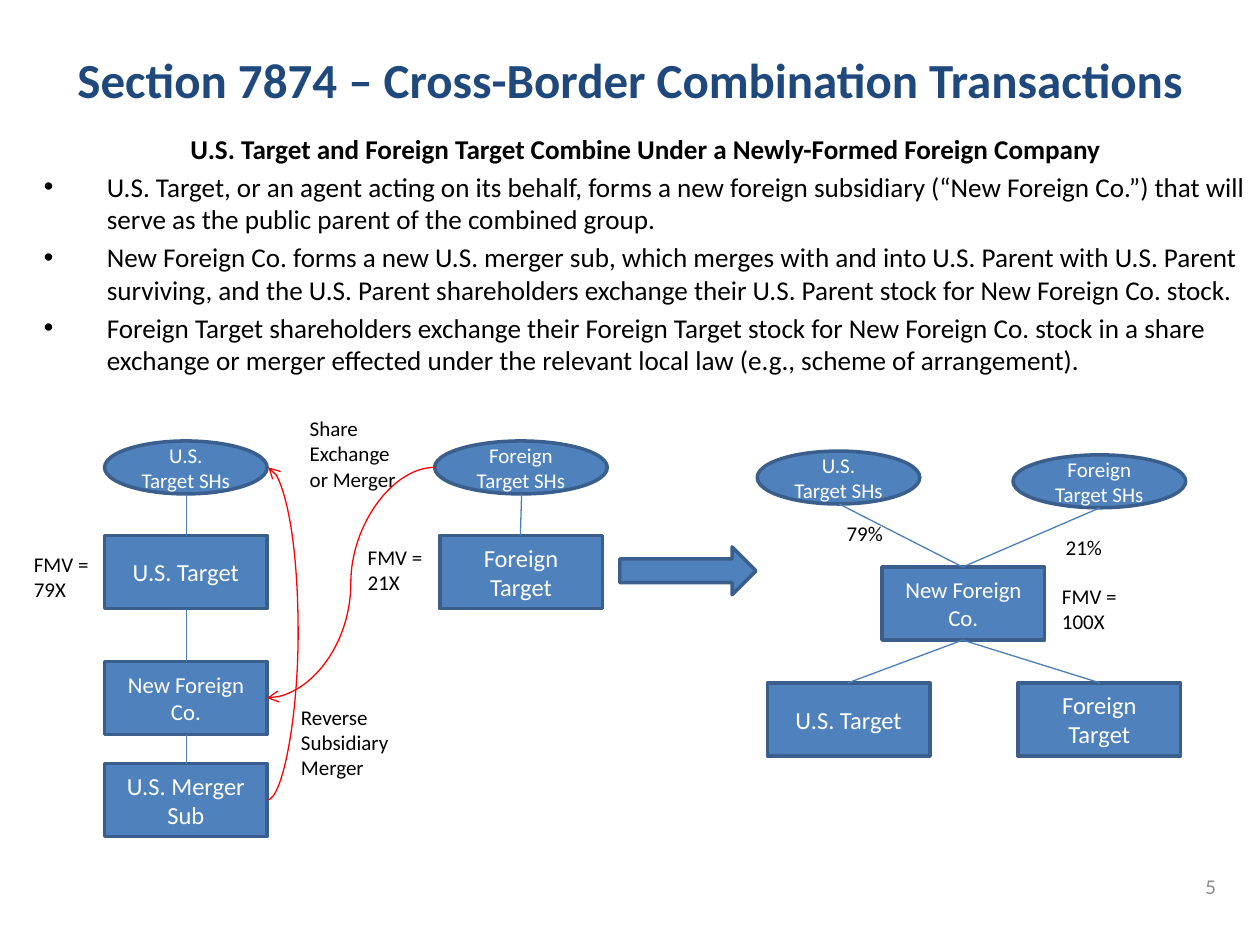
from typing import NamedTuple

from lxml.etree import SubElement
from pptx import Presentation
from pptx.dml.color import RGBColor
from pptx.enum.shapes import MSO_CONNECTOR as Conn, MSO_SHAPE as Shp
from pptx.enum.text import MSO_ANCHOR as Anchor, MSO_AUTO_SIZE as Fit, PP_ALIGN as Align
from pptx.oxml.ns import qn
from pptx.util import Emu, Pt

PX = 9144  # 100 px to the inch
FONT = "Calibri"
BLUE, EDGE, LINK, RED = "4F81BD", "3A5F8C", "4B7EBC", "FF0000"
NAVY, BLACK, WHITE, GREY = "1F497D", "000000", "FFFFFF", "8C8C8C"
BOX_W, BOX_H, OVAL_H = 129, 58, 42


class Node(NamedTuple):
    text: str
    x: int
    y: int
    size: int = 14
    w: int = BOX_W
    h: int = BOX_H
    kind: int = Shp.RECTANGLE


class Label(NamedTuple):
    lines: list[str]
    x: int
    y: int
    w: int
    h: int
    wrap: bool = False


class Link(NamedTuple):
    x1: int
    y1: int
    x2: int
    y2: int


class Curve(NamedTuple):
    link: Link
    bend: int  # thousandths of a percent of the width


def px(n: int) -> Emu:
    return Emu(n * PX)


def rgb(color: str) -> RGBColor:
    return RGBColor.from_string(color)


def add_run(p, text: str, size: float, color: str, bold: bool = False) -> None:
    r = p.add_run()
    r.text = text
    r.font.name, r.font.size, r.font.bold = FONT, Pt(size), bold
    r.font.color.rgb = rgb(color)


def add_text(s, lines: list[str], x: int, y: int, w: int, h: int, size: float,
             color: str = BLACK, bold: bool = False, align=Align.LEFT,
             anchor=Anchor.TOP, wrap: bool = True):
    tf = s.shapes.add_textbox(px(x), px(y), px(w), px(h)).text_frame
    tf.word_wrap, tf.vertical_anchor = wrap, anchor
    for i, line in enumerate(lines):
        p = tf.add_paragraph() if i else tf.paragraphs[0]
        p.alignment = align
        add_run(p, line, size, color, bold)
    return tf


def add_bullet(tf, text: str, size: float) -> None:
    p = tf.add_paragraph()
    add_run(p, text, size, BLACK)
    pPr = p._p.get_or_add_pPr()
    pPr.set("marL", str(px(50)))
    pPr.set("indent", str(px(-50)))
    SubElement(pPr, qn("a:buFont")).set("typeface", "Arial")
    SubElement(pPr, qn("a:buChar")).set("char", "•")


def add_node(s, n: Node) -> None:
    sp = s.shapes.add_shape(n.kind, px(n.x), px(n.y), px(n.w), px(n.h))
    sp.shadow.inherit = False
    sp.fill.solid()
    sp.fill.fore_color.rgb = rgb(BLUE)
    sp.line.color.rgb, sp.line.width = rgb(EDGE), Pt(2)
    if n.text:
        tf = sp.text_frame
        tf.word_wrap, tf.vertical_anchor = True, Anchor.MIDDLE
        tf.paragraphs[0].alignment = Align.CENTER
        add_run(tf.paragraphs[0], n.text, n.size, WHITE)


def add_link(s, link: Link, color: str = LINK, kind=Conn.STRAIGHT):
    c = s.shapes.add_connector(kind, *map(px, link))
    c.line.color.rgb, c.line.width = rgb(color), Pt(0.75)
    SubElement(c._element.spPr, qn("a:effectLst"))
    return c


def add_curve(s, curve: Curve) -> None:
    c = add_link(s, curve.link, RED, Conn.CURVE)
    geom = c._element.spPr.find(qn("a:prstGeom"))
    guide = SubElement(geom.get_or_add_avLst(), qn("a:gd"))
    guide.set("name", "adj1")
    guide.set("fmla", f"val {curve.bend}")
    SubElement(c.line._get_or_add_ln(), qn("a:tailEnd")).set("type", "arrow")


def us_holders(x: int, y: int) -> Node:
    return Node("U.S. Target SHs", x, y, 12, BOX_W, OVAL_H, Shp.OVAL)


def foreign_holders(x: int, y: int) -> Node:
    return Node("Foreign Target SHs", x, y, 12, 137, OVAL_H, Shp.OVAL)


BULLETS = [
    "U.S. Target, or an agent acting on its behalf, forms a new foreign subsidiary "
    "(“New Foreign Co.”) that will serve as the public parent of the combined group.",
    "New Foreign Co. forms a new U.S. merger sub, which merges with and into U.S. Parent "
    "with U.S. Parent surviving, and the U.S. Parent shareholders exchange their "
    "U.S. Parent stock for New Foreign Co. stock.",
    "Foreign Target shareholders exchange their Foreign Target stock for New Foreign Co. "
    "stock in a share exchange or merger effected under the relevant local law "
    "(e.g., scheme of arrangement).",
]
NODES = [
    # Before the combination
    us_holders(83, 350),
    Node("U.S. Target", 83, 425),
    Node("New Foreign Co.", 83, 525, 13),
    Node("U.S. Merger Sub", 83, 606),
    foreign_holders(345, 350),
    Node("Foreign Target", 349, 425),
    Node("", 492, 434, w=108, h=38, kind=Shp.RIGHT_ARROW),
    # After the combination
    us_holders(601, 358),
    foreign_holders(804, 361),
    Node("New Foreign Co.", 700, 450, 13),
    Node("U.S. Target", 609, 542),
    Node("Foreign Target", 808, 542),
]
LINKS = [
    Link(148, 392, 148, 425), Link(148, 483, 148, 525), Link(148, 583, 148, 606),
    Link(414, 392, 413, 425),
    Link(666, 400, 764, 450), Link(873, 403, 764, 450),
    Link(673, 542, 764, 508), Link(873, 542, 764, 508),
]
CURVES = [
    Curve(Link(212, 635, 213, 371), 2500000),
    Curve(Link(345, 371, 212, 554), 50000),
]
LABELS = [
    Label(["FMV =", "79X"], 17, 433, 68, 50),
    Label(["FMV =", "21X"], 282, 427, 64, 50),
    Label(["FMV =", "100X"], 833, 458, 68, 50),
    Label(["79%"], 662, 408, 49, 30),
    Label(["21%"], 836, 419, 49, 30),
    Label(["Reverse Subsidiary Merger"], 229, 554, 112, 71, True),
    Label(["Share", "Exchange", "or Merger"], 236, 325, 89, 71),
]


def main() -> None:
    prs = Presentation()
    prs.slide_width, prs.slide_height = px(1000), px(750)
    s = prs.slides.add_slide(prs.slide_layouts[6])

    # Title, body and slide number
    add_text(s, ["Section 7874 – Cross-Border Combination Transactions"],
             0, 0, 1000, 125, 28, NAVY, True, Align.CENTER, Anchor.MIDDLE)
    body = add_text(
        s, ["U.S. Target and Foreign Target Combine Under a Newly-Formed Foreign Company"],
        25, 100, 974, 209, 15.5, bold=True, align=Align.CENTER)
    for text in BULLETS:
        add_bullet(body, text, 15.5)
    for p in body.paragraphs:
        p.space_before = Pt(3.1)
    add_text(s, ["5"], 742, 683, 233, 40, 12, GREY, align=Align.RIGHT, anchor=Anchor.MIDDLE)

    # Structure diagram
    for node in NODES:
        add_node(s, node)
    for link in LINKS:
        add_link(s, link)
    for curve in CURVES:
        add_curve(s, curve)
    for lb in LABELS:
        tf = add_text(s, lb.lines, lb.x, lb.y, lb.w, lb.h, 12, wrap=lb.wrap)
        tf.auto_size = Fit.SHAPE_TO_FIT_TEXT

    prs.save("out.pptx")


if __name__ == "__main__":
    main()
